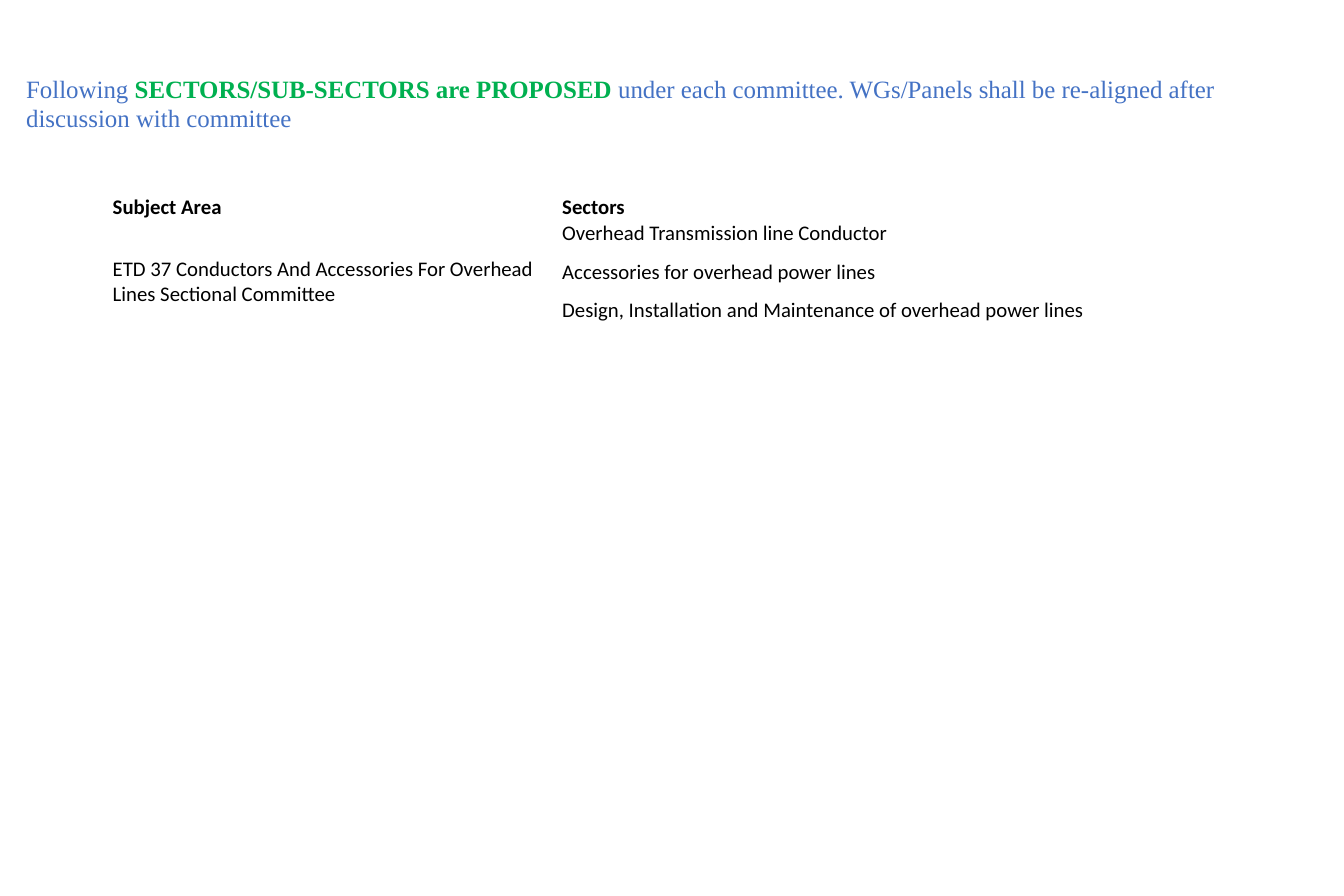
from pptx import Presentation
from pptx.dml.color import RGBColor
from pptx.enum.text import MSO_ANCHOR, MSO_AUTO_SIZE, PP_ALIGN
from pptx.util import Inches, Pt

TOP, MIDDLE, BOTTOM = MSO_ANCHOR.TOP, MSO_ANCHOR.MIDDLE, MSO_ANCHOR.BOTTOM
LEFT = PP_ALIGN.LEFT
FIT_SHAPE = MSO_AUTO_SIZE.SHAPE_TO_FIT_TEXT
BLUE = RGBColor(0x44, 0x72, 0xC4)
GREEN = RGBColor(0x00, 0xB0, 0x50)
BLACK = RGBColor(0x00, 0x00, 0x00)
TITLE_ONLY = 5
GRID = 0.25

HEADINGS = ("Subject Area", "Sectors")
COMMITTEE = "ETD 37 Conductors And Accessories For Overhead Lines Sectional Committee"
SECTORS = (
    "Overhead Transmission line Conductor",
    "Accessories for overhead power lines",
    "Design, Installation and Maintenance of overhead power lines",
)


def grid(steps):
    return Inches(steps * GRID)


def add_text(paragraph, text, font="Calibri", size=20, color=BLACK, bold=False):
    run = paragraph.add_run()
    run.text = text
    run.font.name = font
    run.font.size = Pt(size)
    run.font.color.rgb = color
    run.font.bold = bold


class SectorSlide:
    """Build a slide on a quarter-inch grid with one shared style."""

    def __init__(self, presentation):
        self.slide = presentation.slides.add_slide(presentation.slide_layouts[TITLE_ONLY])
        self.title_style = {"font": "Times New Roman", "size": 24}

    def title(self, column, row, width, height, pieces):
        shape = self.slide.shapes.title
        shape.left, shape.top = grid(column), grid(row)
        shape.width, shape.height = grid(width), grid(height)
        frame = shape.text_frame
        frame.word_wrap = True
        frame.auto_size = FIT_SHAPE
        frame.vertical_anchor = TOP
        paragraph = frame.paragraphs[0]
        paragraph.alignment = LEFT
        for text, color, bold in pieces:
            add_text(paragraph, text, color=color, bold=bold, **self.title_style)

    def cell(self, cell, text, anchor=TOP, bold=False):
        cell.vertical_anchor = anchor
        cell.margin_left = cell.margin_top = cell.margin_right = Inches(0.01)
        cell.margin_bottom = 0
        add_text(cell.text_frame.paragraphs[0], text, bold=bold)

    def table(self, column, row, widths, heights):
        frame = self.slide.shapes.add_table(
            len(heights), len(widths), grid(column), grid(row),
            grid(sum(widths)), grid(sum(heights)))
        table = frame.table
        table.first_row = table.horz_banding = False
        for table_column, width in zip(table.columns, widths):
            table_column.width = grid(width)
        for table_row, height in zip(table.rows, heights):
            table_row.height = grid(height)
        for cell in table.iter_cells():
            cell.fill.background()
        return table


def main():
    presentation = Presentation()
    presentation.slide_width, presentation.slide_height = Inches(18), Inches(12)
    page = SectorSlide(presentation)
    page.title(1, 3.72, 68.56, 3.64, (
        ("Following ", BLUE, False),
        ("SECTORS/SUB-SECTORS are PROPOSED ", GREEN, True),
        ("under each committee. WGs/Panels shall be re-aligned after "
         "discussion with committee", BLUE, False),
    ))

    table = page.table(6, 10.4, (24.08, 31.4), (0.88, 2.08, 2.08, 2.44))
    for index, heading in enumerate(HEADINGS):
        page.cell(table.cell(0, index), heading, BOTTOM, bold=True)
    committee_cell = table.cell(1, 0)
    committee_cell.merge(table.cell(len(SECTORS), 0))
    page.cell(committee_cell, COMMITTEE, MIDDLE)
    for index, sector in enumerate(SECTORS, start=1):
        page.cell(table.cell(index, 1), sector)

    presentation.save("out.pptx")


if __name__ == "__main__":
    main()
